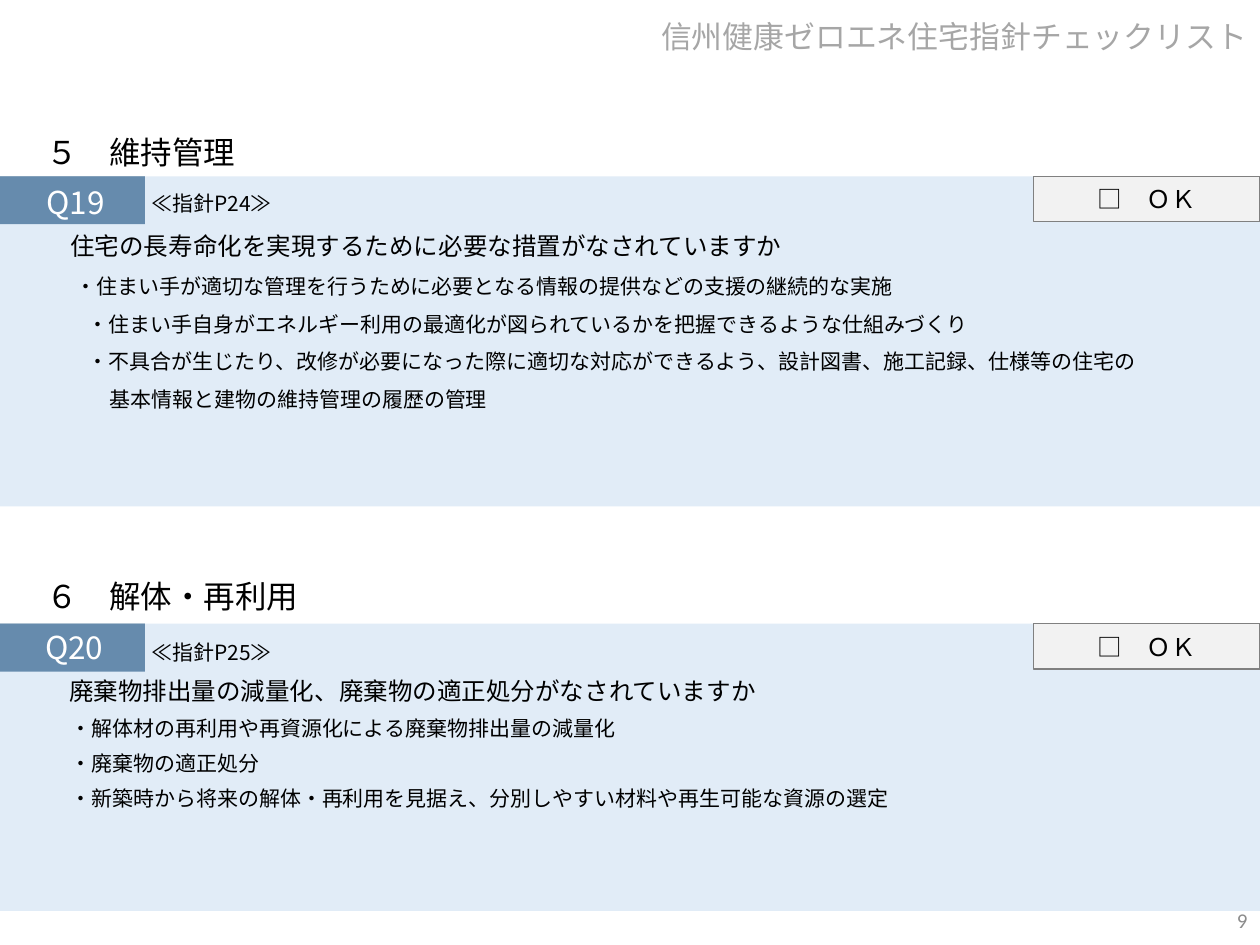
from pptx import Presentation
from pptx.dml.color import RGBColor
from pptx.enum.shapes import MSO_SHAPE as SHAPE
from pptx.enum.text import MSO_ANCHOR as ANCHOR, PP_ALIGN as ALIGN
from pptx.oxml.ns import qn
from pptx.util import Inches, Pt
from lxml.etree import SubElement

FONT = "Noto Sans CJK JP"
presentation = Presentation()
presentation.slide_width, presentation.slide_height = Inches(10), Inches(7.5)
slide = presentation.slides.add_slide(presentation.slide_layouts[6])
COLUMN = presentation.slide_width / 100
ROW = presentation.slide_height / 75


def add_box(left, top, width, height, fill=None, line=None, alpha=None, anchor=ANCHOR.TOP):
    """Add a filled rectangle, or a text box when there is no fill; lengths are columns and rows."""
    place = [round(left * COLUMN), round(top * ROW), round(width * COLUMN), round(height * ROW)]
    if fill:
        shape = slide.shapes.add_shape(SHAPE.RECTANGLE, *place)
        shape.shadow.inherit = False
        shape.fill.solid()
        shape.fill.fore_color.rgb = RGBColor.from_string(fill)
        if alpha:
            color = shape.fill._xPr.find(f".//{qn('a:srgbClr')}")
            SubElement(color, qn("a:alpha"), val=str(alpha * 1000))
        if line:
            shape.line.color.rgb = RGBColor.from_string(line)
            shape.line.width = Pt(0.75)
        else:
            shape.line.fill.background()
    else:
        shape = slide.shapes.add_textbox(*place)
    shape.text_frame.word_wrap = True
    shape.text_frame.vertical_anchor = anchor
    return shape


def write(shape, text, size=12, color="000000", font=FONT, align=ALIGN.LEFT,
          spacing=1.0, before=0, indent=0):
    """Fill the empty first paragraph of the shape, or add one after it."""
    frame = shape.text_frame
    paragraph = frame.add_paragraph() if frame.text else frame.paragraphs[0]
    paragraph.alignment = align
    paragraph.line_spacing = spacing
    paragraph.space_before = Pt(before)
    if indent:
        paragraph._p.get_or_add_pPr().set("marL", str(round(indent * COLUMN)))
    run = paragraph.add_run()
    run.text = text
    run.font.size = Pt(size)
    run.font.name = font
    run.font.color.rgb = RGBColor.from_string(color)
    SubElement(run._r.get_or_add_rPr(), qn("a:ea"), typeface=font)


title = add_box(0, 0, 100, 6.1, anchor=ANCHOR.MIDDLE)
write(title, "信州健康ゼロエネ住宅指針チェックリスト", size=17.6, color="A6A6A6",
      align=ALIGN.RIGHT, spacing=0.9)

# Each bullet line is paired with its indent in columns.
sections = [
    dict(heading="５　維持管理", heading_top=10.1, top=14, height=26.2, body_top=14.4,
         guide_top=14.6, left=2.7, number="Q19", guide="≪指針P24≫", spacing=1.0,
         question="住宅の長寿命化を実現するために必要な措置がなされていますか",
         bullets=[
             ("・住まい手が適切な管理を行うために必要となる情報の提供などの支援の継続的な実施", 2.3),
             ("・住まい手自身がエネルギー利用の最適化が図られているかを把握できるような仕組みづくり", 3.3),
             ("・不具合が生じたり、改修が必要になった際に適切な対応ができるよう、"
              "設計図書、施工記録、仕様等の住宅の", 3.3),
             ("基本情報と建物の維持管理の履歴の管理", 5)]),
    dict(heading="６　解体・再利用", heading_top=45.3, top=49.5, height=22.8, body_top=49.7,
         guide_top=50.3, left=2.6, number="Q20", guide="≪指針P25≫", spacing=0.9,
         question="廃棄物排出量の減量化、廃棄物の適正処分がなされていますか",
         bullets=[
             ("・解体材の再利用や再資源化による廃棄物排出量の減量化", 2),
             ("・廃棄物の適正処分", 2),
             ("・新築時から将来の解体・再利用を見据え、分別しやすい材料や再生可能な資源の選定", 2)]),
]

for section in sections:
    top = section["top"]
    add_box(0, top, 11.5, 3.8, fill="1F4E79")
    add_box(0, top, 100, section["height"], fill="BDD7EE", alpha=45)

    body = add_box(section["left"], section["body_top"], 94.3, section["height"])
    write(body, section["number"], size=18, color="FFFFFF", spacing=0.9)
    write(body, section["question"], size=14, spacing=0.9, before=7.2, indent=1.9)
    for text, indent in section["bullets"]:
        write(body, text, spacing=section["spacing"], before=7.2, indent=indent)

    heading = add_box(2.7, section["heading_top"], 45.8, 4)
    write(heading, section["heading"], size=18)
    check = add_box(82, top, 18, 3.6, fill="F2F2F2", line="808080", anchor=ANCHOR.MIDDLE)
    write(check, "□　ＯＫ", size=14, align=ALIGN.CENTER)
    guide = add_box(10.2, section["guide_top"], 13.2, 3)
    write(guide, section["guide"], align=ALIGN.CENTER)

page_number = add_box(77.5, 71, 22.5, 4, anchor=ANCHOR.MIDDLE)
write(page_number, "9", color="8C8C8C", font="Calibri", align=ALIGN.RIGHT)

presentation.save("out.pptx")
